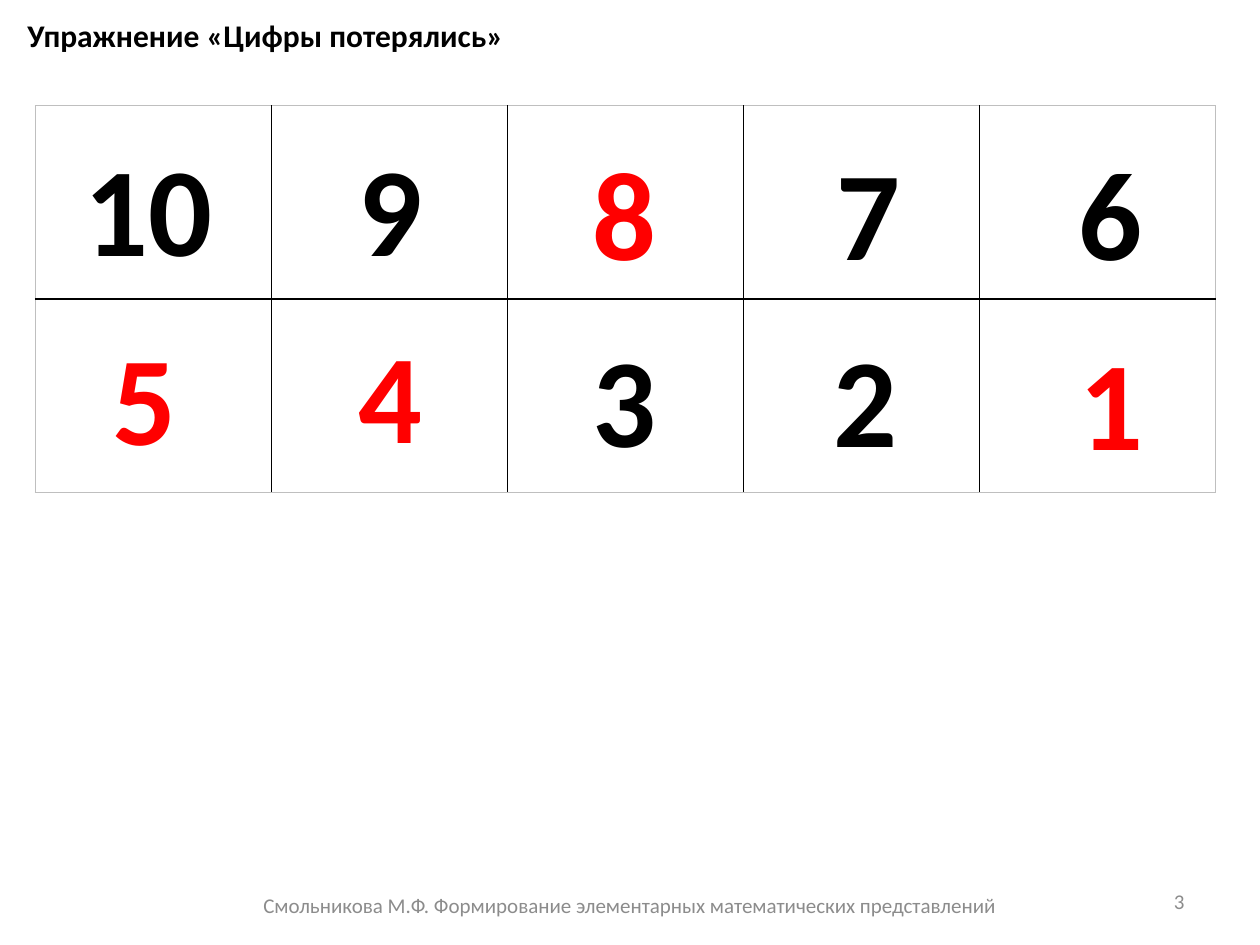
"""Build the slide of the lost digits exercise."""
from lxml.etree import SubElement
from pptx import Presentation
from pptx.dml.color import RGBColor
from pptx.enum.text import MSO_ANCHOR, MSO_AUTO_SIZE, PP_ALIGN
from pptx.oxml.ns import qn
from pptx.util import Inches, Pt

COLORS = {"ink": "000000", "lost": "FF0000", "footer": "8C8C8C", "frame": "BFBFBF"}
FONT = "Calibri"
TITLE = "Упражнение «Цифры потерялись»"
FOOTER = "Смольникова М.Ф. Формирование элементарных математических представлений"
PAGE_NUMBER = "3"

DIGITS = [
    ("10", 0.43, 0.99, "ink"),
    ("9", 2.35, 0.99, "ink"),
    ("8", 4.21, 1.02, "lost"),
    ("7", 6.14, 1.02, "ink"),
    ("6", 8.06, 1.02, "ink"),
    ("5", 0.4, 2.49, "lost"),
    ("4", 2.35, 2.47, "lost"),
    ("3", 4.21, 2.5, "ink"),
    ("2", 6.12, 2.5, "ink"),
    ("1", 8.07, 2.53, "lost"),
]
DIGIT_SIZE = (1.5, 1.31)
ROWS, COLUMNS = 2, 5
GRID = (0.28, 0.84, 9.37, 3.07)


def add_text(page, area, text, size, color, align=PP_ALIGN.LEFT, bold=False, middle=False):
    box = page.shapes.add_textbox(*map(Inches, area))
    frame = box.text_frame
    frame.word_wrap = True
    if middle:
        frame.vertical_anchor = MSO_ANCHOR.MIDDLE
    else:
        frame.auto_size = MSO_AUTO_SIZE.SHAPE_TO_FIT_TEXT
    paragraph = frame.paragraphs[0]
    paragraph.alignment = align
    span = paragraph.add_run()
    span.text = text
    span.font.name = FONT
    span.font.size = Pt(size)
    span.font.bold = bold
    span.font.color.rgb = RGBColor.from_string(COLORS[color])


def set_borders(cell, outer_sides):
    properties = cell._tc.get_or_add_tcPr()
    for side, outer in outer_sides.items():
        width, color = (Pt(0.5), "frame") if outer else (Pt(1), "ink")
        line = SubElement(properties, qn(f"a:ln{side}"), w=str(width))
        fill = SubElement(line, qn("a:solidFill"))
        SubElement(fill, qn("a:srgbClr"), val=COLORS[color])


def add_grid(page):
    table = page.shapes.add_table(ROWS, COLUMNS, *map(Inches, GRID)).table
    table.first_row = False
    table.horz_banding = False
    for row in range(ROWS):
        for column in range(COLUMNS):
            cell = table.cell(row, column)
            set_borders(cell, {
                "L": column == 0,
                "R": column == COLUMNS - 1,
                "T": row == 0,
                "B": row == ROWS - 1,
            })
            cell.fill.background()


def main():
    deck = Presentation()
    deck.slide_width, deck.slide_height = Inches(10), Inches(7.5)
    page = deck.slides.add_slide(deck.slide_layouts[6])
    add_grid(page)
    add_text(page, (0.12, 0.08, 6.77, 0.4), TITLE, 18, "ink", bold=True)
    for digit, left, top, color in DIGITS:
        add_text(page, (left, top, *DIGIT_SIZE), digit, 72, color, PP_ALIGN.CENTER, bold=True)
    add_text(page, (0, 6.98, 10, 0.4), FOOTER, 12, "footer", PP_ALIGN.CENTER, middle=True)
    add_text(page, (7.17, 6.95, 2.33, 0.4), PAGE_NUMBER, 12, "footer", PP_ALIGN.RIGHT, middle=True)
    deck.save("out.pptx")


if __name__ == "__main__":
    main()
